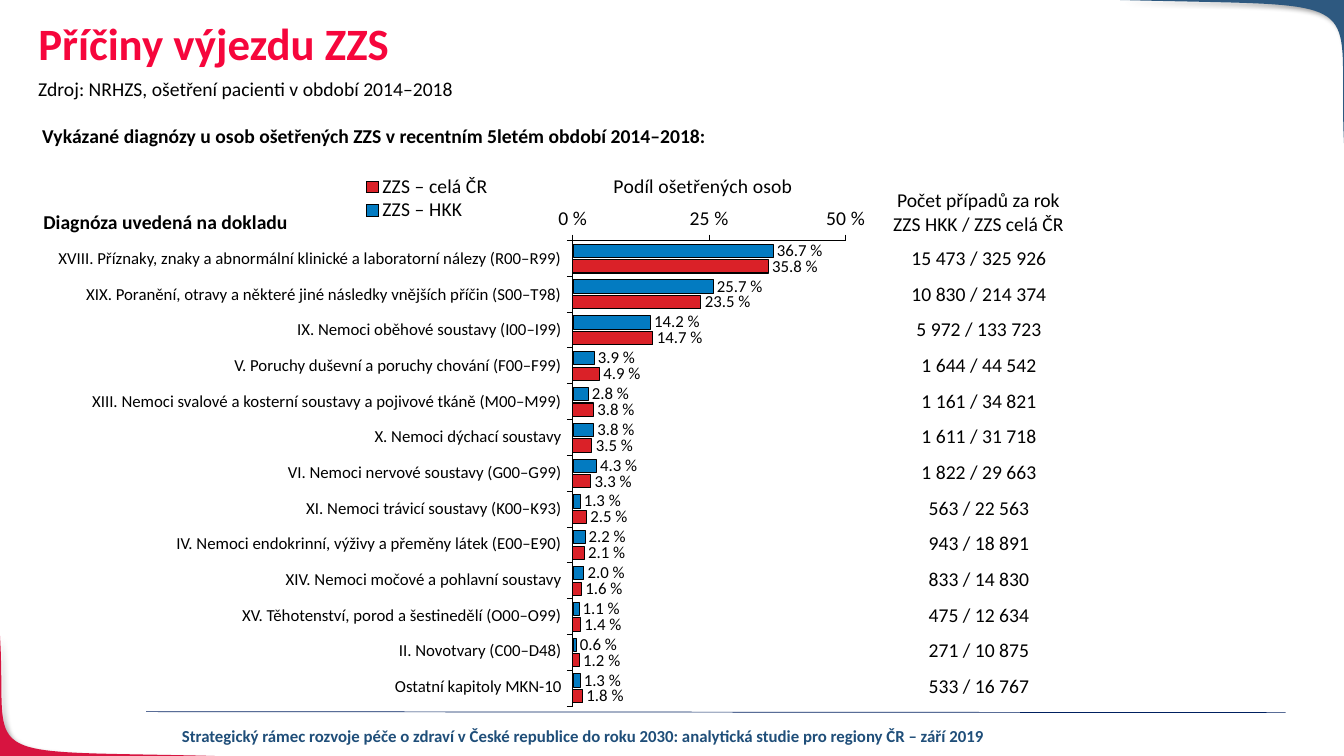
from lxml import etree
from pptx import Presentation
from pptx.chart.data import CategoryChartData
from pptx.dml.color import RGBColor
from pptx.enum.chart import (XL_CHART_TYPE, XL_LABEL_POSITION, XL_LEGEND_POSITION,
                             XL_TICK_LABEL_POSITION, XL_TICK_MARK)
from pptx.enum.shapes import MSO_CONNECTOR
from pptx.enum.text import MSO_ANCHOR, PP_ALIGN
from pptx.oxml import parse_xml
from pptx.oxml.ns import nsdecls, qn
from pptx.util import Inches, Pt

# Content
TITLE = "Příčiny výjezdu ZZS"
SOURCE = "Zdroj: NRHZS, ošetření pacienti v období 2014–2018"
SUBTITLE = "Vykázané diagnózy u osob ošetřených ZZS v recentním 5letém období 2014–2018:"
FOOTER = ("Strategický rámec rozvoje péče o zdraví v České republice do roku 2030: "
          "analytická studie pro regiony ČR – září 2019")
DIAGNOSIS_HEADER = "Diagnóza uvedená na dokladu"
COUNT_HEADER = "Počet případů za rok\nZZS HKK / ZZS celá ČR"
AXIS_TITLE = "Podíl ošetřených osob"
SERIES = [("ZZS – HKK", "blue", 0.25), ("ZZS – celá ČR", "red", 0.75)]
# Diagnosis, cases per year, share in HKK, share in the whole country
DIAGNOSES = [
    ("XVIII. Příznaky, znaky a abnormální klinické a laboratorní nálezy (R00–R99)",
     "15 473 / 325 926", 0.367, 0.358),
    ("XIX. Poranění, otravy a některé jiné následky vnějších příčin (S00–T98)",
     "10 830 / 214 374", 0.257, 0.235),
    ("IX. Nemoci oběhové soustavy (I00–I99)", "5 972 / 133 723", 0.142, 0.147),
    ("V. Poruchy duševní a poruchy chování (F00–F99)", "1 644 / 44 542", 0.039, 0.049),
    ("XIII. Nemoci svalové a kosterní soustavy a pojivové tkáně (M00–M99)",
     "1 161 / 34 821", 0.028, 0.038),
    ("X. Nemoci dýchací soustavy", "1 611 / 31 718", 0.038, 0.035),
    ("VI. Nemoci nervové soustavy (G00–G99)", "1 822 / 29 663", 0.043, 0.033),
    ("XI. Nemoci trávicí soustavy (K00–K93)", "563 / 22 563", 0.013, 0.025),
    ("IV. Nemoci endokrinní, výživy a přeměny látek (E00–E90)",
     "943 / 18 891", 0.022, 0.021),
    ("XIV. Nemoci močové a pohlavní soustavy", "833 / 14 830", 0.020, 0.016),
    ("XV. Těhotenství, porod a šestinedělí (O00–O99)", "475 / 12 634", 0.011, 0.014),
    ("II. Novotvary (C00–D48)", "271 / 10 875", 0.006, 0.012),
    ("Ostatní kapitoly MKN-10", "533 / 16 767", 0.013, 0.018),
]
COLORS = {"title": "F6063C", "text": "000000", "footer": "1F4E79", "rule": "002060",
          "blue": "037BC1", "red": "DA2128", "corner_red": "D71440",
          "corner_blue": "2E5980"}
# Corner point, then the four control points of its curved edge
CORNERS = [
    ("corner_red", (0, 7.5), [(2.13, 7.5), (-0.34, 7.44), (0.08, 7.59), (0, 6.3)]),
    ("corner_blue", (13.33, 0), [(11.11, 0), (13.7, 0.07), (13.26, -0.1), (13.33, 1.42)]),
]
FONT = "Calibri"
PLAIN_TABLE = "{2D5ABB26-0587-4C30-8999-92F81FD0307C}"


def color(name):
    return RGBColor.from_string(COLORS[name])


def style(font, size, name="text", bold=False):
    font.name, font.size, font.bold = FONT, Pt(size), bold
    font.color.rgb = color(name)


def write(frame, text, size, name="text", bold=False, align=PP_ALIGN.LEFT):
    para = frame.paragraphs[0]
    para.text = text
    para.alignment = align
    style(para.font, size, name, bold)
    return para


def add_text(page, area, text, size, name="text", bold=False, align=PP_ALIGN.LEFT, wrap=True):
    box = page.shapes.add_textbox(*map(Inches, area))
    box.text_frame.word_wrap = wrap
    write(box.text_frame, text, size, name, bold, align)


def add_corner(page, name, corner, curve):
    steps = 40
    points = []
    for step in range(steps + 1):
        t = step / steps
        weights = ((1 - t) ** 3, 3 * t * (1 - t) ** 2, 3 * t ** 2 * (1 - t), t ** 3)
        points.append(tuple(Inches(sum(w * point[axis] for w, point in zip(weights, curve)))
                            for axis in (0, 1)))
    points.append(tuple(map(Inches, corner)))
    builder = page.shapes.build_freeform(*points[0])
    builder.add_line_segments(points[1:], close=True)
    shape = builder.convert_to_shape()
    shape.fill.solid()
    shape.fill.fore_color.rgb = color(name)
    shape.line.fill.background()
    shape.element.spPr.append(parse_xml(
        f'<a:effectLst {nsdecls("a")}><a:outerShdw blurRad="{Pt(4)}" dist="{Pt(3)}" '
        'dir="2700000" algn="tl" rotWithShape="0"><a:srgbClr val="000000">'
        '<a:alpha val="40000"/></a:srgbClr></a:outerShdw></a:effectLst>'))


def place(element, index, x, y, w=None, h=None, inner=False):
    """Give a chart part a fixed place, in fractions of the chart."""
    for old in element.findall(qn("c:layout")):
        element.remove(old)
    layout = parse_xml(f'<c:layout {nsdecls("c")}><c:manualLayout/></c:layout>')
    settings = [("layoutTarget", "inner")] if inner else []
    settings += [("xMode", "edge"), ("yMode", "edge"), ("x", x), ("y", y)]
    settings += [("w", w), ("h", h)] if w else []
    for tag, value in settings:
        etree.SubElement(layout[0], qn(f"c:{tag}")).set("val", str(value))
    element.insert(index, layout)


def add_share_chart(page):
    data = CategoryChartData()
    data.categories = [str(number + 1) for number in range(len(DIAGNOSES))]
    for column, (name, _, _) in enumerate(SERIES, start=2):
        data.add_series(name, [row[column] for row in DIAGNOSES])
    chart = page.shapes.add_chart(XL_CHART_TYPE.BAR_CLUSTERED, Inches(3.33), Inches(1.51),
                                  Inches(5.33), Inches(5.62), data).chart
    chart.has_title = False
    style(chart.font, 14)
    chart.has_legend = True
    chart.legend.position = XL_LEGEND_POSITION.TOP
    chart.legend.include_in_layout = False

    # Bars
    plot = chart.plots[0]
    plot.vary_by_categories = False
    plot.gap_width, plot.overlap = 50, -20
    for series, (_, fill, width) in zip(plot.series, SERIES):
        series.format.fill.solid()
        series.format.fill.fore_color.rgb = color(fill)
        series.format.line.color.rgb = color("text")
        series.format.line.width = Pt(width)
        labels = series.data_labels
        labels.show_value = True
        labels.position = XL_LABEL_POSITION.OUTSIDE_END
        labels.number_format, labels.number_format_is_linked = r"0.0\ %", False
        style(labels.font, 12)

    # Axes
    for axis in (chart.category_axis, chart.value_axis):
        axis.has_major_gridlines = False
        axis.major_tick_mark = XL_TICK_MARK.OUTSIDE
        axis.minor_tick_mark = XL_TICK_MARK.NONE
        axis.format.line.color.rgb = color("text")
        axis.format.line.width = Pt(0.75)
    chart.category_axis.reverse_order = True
    chart.category_axis.tick_label_position = XL_TICK_LABEL_POSITION.NONE
    shares = chart.value_axis
    shares.minimum_scale, shares.maximum_scale, shares.major_unit = 0, 0.5, 0.25
    shares.tick_labels.number_format = r"0\ %"
    shares.tick_labels.number_format_is_linked = False
    write(shares.axis_title.text_frame, AXIS_TITLE, 14, align=PP_ALIGN.CENTER)

    # Places of plot, legend and axis title
    root = chart.element
    place(root.xpath(".//c:plotArea")[0], 0, 0.441, 0.156, 0.508, 0.822, inner=True)
    place(root.xpath(".//c:legend")[0], 1, 0.04, 0.04, 0.26, 0.08)
    place(root.xpath(".//c:valAx/c:title")[0], 1, 0.51, 0.03)


def add_plain_table(page, rows, widths, area):
    frame = page.shapes.add_table(rows, len(widths), *map(Inches, area))
    table = frame.table
    table.first_row = table.horz_banding = False
    next(frame.element.iter(qn("a:tableStyleId"))).text = PLAIN_TABLE
    for column, width in zip(table.columns, widths):
        column.width = Inches(width)
    for cell in table.iter_cells():
        cell.fill.background()
        cell.vertical_anchor = MSO_ANCHOR.MIDDLE
        cell.margin_left = cell.margin_right = cell.margin_top = Inches(0.01)
        cell.margin_bottom = 0
    return table


deck = Presentation()
deck.slide_width, deck.slide_height = Inches(13.33), Inches(7.5)
page = deck.slides.add_slide(deck.slide_layouts[5])

# Corners, rule and footer
for corner in CORNERS:
    add_corner(page, *corner)
rule = page.shapes.add_connector(MSO_CONNECTOR.STRAIGHT, Inches(1.45), Inches(7.06),
                                 Inches(12.75), Inches(7.07))
rule.line.color.rgb = color("rule")
rule.line.width = Pt(0.5)
etree.SubElement(rule.element.spPr, qn("a:effectLst"))
add_text(page, (1.68, 7.15, 8.21, 0.3), FOOTER, 12, "footer", True, PP_ALIGN.CENTER)

# Headings
title = page.shapes.title
title.left, title.top, title.width, title.height = map(Inches, (0.28, 0.17, 12.59, 0.85))
title.text_frame.vertical_anchor = MSO_ANCHOR.TOP
write(title.text_frame, TITLE, 32, "title", True).line_spacing = 0.9
add_text(page, (0.28, 0.71, 4.36, 0.34), SOURCE, 14, wrap=False)
add_text(page, (0.32, 1.18, 8.47, 0.34), SUBTITLE, 14, bold=True)

# Chart with the diagnoses and case counts beside it
add_share_chart(page)
table = add_plain_table(page, len(DIAGNOSES) + 1, (5.15, 3.19, 1.88), (0.43, 2.03, 10.22, 4.96))
header = table.cell(0, 0)
header.margin_left = header.margin_right = header.margin_top = 0
write(header.text_frame, DIAGNOSIS_HEADER, 14, bold=True)
table.cell(0, 1).merge(table.cell(0, 2))
for row, (diagnosis, cases, _, _) in enumerate(DIAGNOSES, start=1):
    write(table.cell(row, 0).text_frame, diagnosis, 12, align=PP_ALIGN.RIGHT)
    write(table.cell(row, 2).text_frame, cases, 14, align=PP_ALIGN.CENTER)
counts = add_plain_table(page, 1, (2.21,), (8.6, 1.77, 2.21, 0.68))
write(counts.cell(0, 0).text_frame, COUNT_HEADER, 14, align=PP_ALIGN.CENTER)

deck.save("out.pptx")
